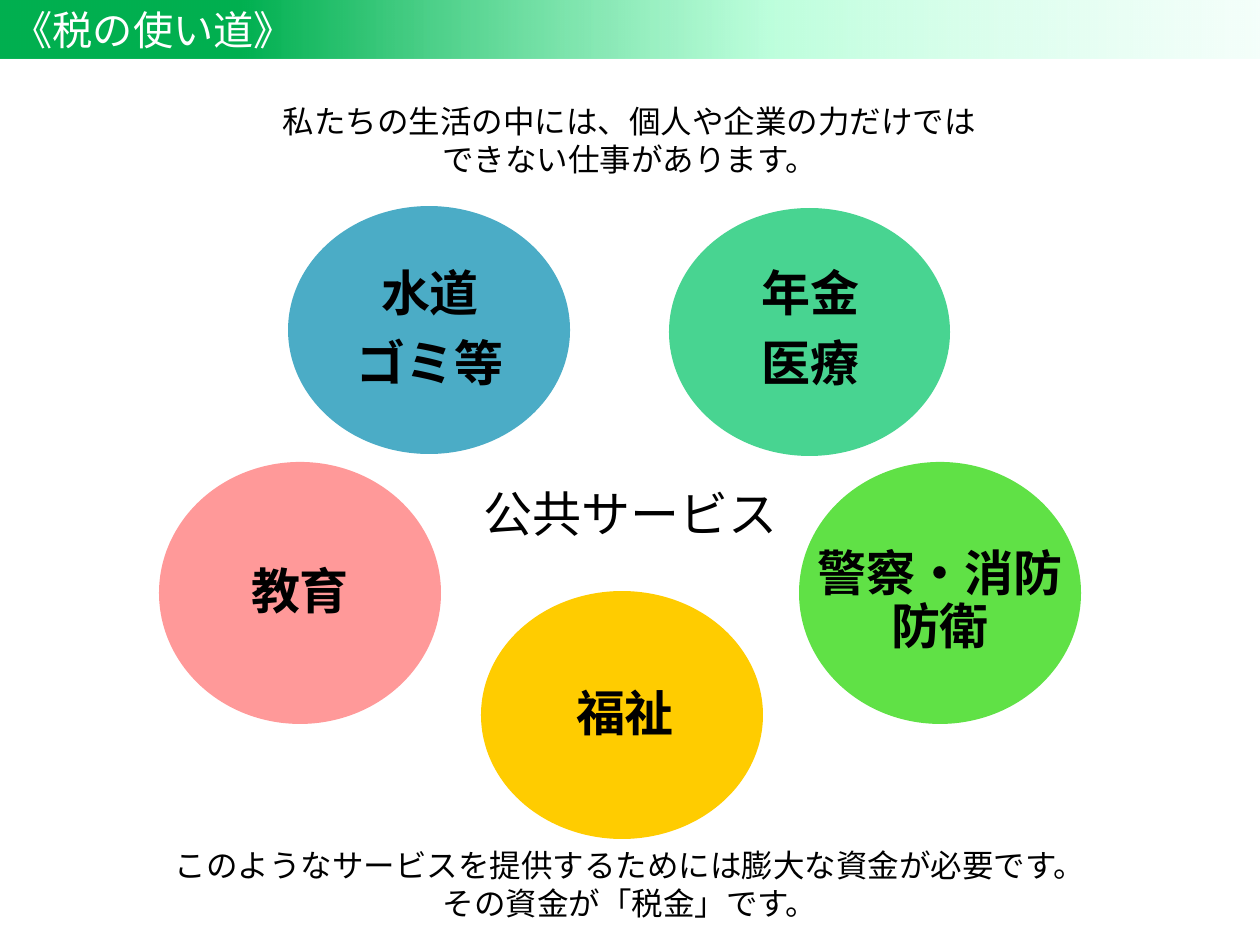
from lxml import etree
from pptx import Presentation
from pptx.dml.color import RGBColor
from pptx.enum.shapes import MSO_SHAPE
from pptx.enum.text import MSO_ANCHOR, MSO_AUTO_SIZE, PP_ALIGN
from pptx.oxml import parse_xml
from pptx.oxml.ns import nsdecls, qn
from pptx.util import Pt

PX = 914400 / 126
OVAL, RECTANGLE = MSO_SHAPE.OVAL, MSO_SHAPE.RECTANGLE
MIDDLE, TOP = MSO_ANCHOR.MIDDLE, MSO_ANCHOR.TOP
CENTER, LEFT = PP_ALIGN.CENTER, PP_ALIGN.LEFT
FIT_SHAPE, NO_FIT = MSO_AUTO_SIZE.SHAPE_TO_FIT_TEXT, MSO_AUTO_SIZE.NONE

BLACK = RGBColor(0x00, 0x00, 0x00)
WHITE = RGBColor(0xFF, 0xFF, 0xFF)
BLUE = RGBColor(0x4B, 0xAC, 0xC6)
PINK = RGBColor(0xFF, 0x99, 0x99)
YELLOW = RGBColor(0xFF, 0xCC, 0x00)
MINT = RGBColor(0x48, 0xD4, 0x91)
GREEN = RGBColor(0x60, 0xE1, 0x46)
BANNER_START = RGBColor(0x00, 0xB0, 0x50)
BANNER_MIDDLE = RGBColor(0xAB, 0xFF, 0xD3)
BANNER_END = RGBColor(0xDB, 0xFF, 0xF0)

BANNER_STOPS = [(19, BANNER_START, 100), (61, BANNER_MIDDLE, 78), (100, BANNER_END, 28)]
SPACED = {"line_spacing": 0.9, "space_after": Pt(9.8)}
SERVICES = [
    (BLUE, (288, 206, 282, 248), (330, 243, 200, 175), ["水道", "ゴミ等"]),
    (PINK, (159, 462, 282, 262), (200, 501, 200, 185), ["教育"]),
    (YELLOW, (481, 591, 282, 248), (525, 633, 200, 165), ["福祉"]),
    (MINT, (669, 208, 281, 248), (713, 243, 195, 175), ["年金", "医療"]),
    (GREEN, (799, 462, 282, 262), (799, 518, 282, 169), ["警察・消防防衛"]),
]
NOTES = [
    ((208, 96, 843, 89), ["私たちの生活の中には、個人や企業の力だけでは", "できない仕事があります。"]),
    ((160, 840, 940, 89), ["このようなサービスを提供するためには膨大な資金が必要です。", "その資金が「税金」です。"]),
]


def px(*lengths):
    """Turn pixel lengths into EMU."""
    return [round(length * PX) for length in lengths]


def set_format(target, values):
    """Set each named attribute on the target."""
    for name, value in values.items():
        setattr(target, name, value)


class SlideBuilder:
    """Holds the style and the current slide."""

    font_name = "Noto Sans CJK JP"

    def __init__(self, slide):
        self.slide = slide

    def fill_text(self, shape, lines, size, color=BLACK, bold=False, align=CENTER, spacing=None, frame=None):
        text_frame = shape.text_frame
        set_format(text_frame, {"word_wrap": True, **(frame or {})})
        for index, line in enumerate(lines):
            paragraph = text_frame.paragraphs[0] if index == 0 else text_frame.add_paragraph()
            set_format(paragraph, {"alignment": align, **(spacing or {})})
            run = paragraph.add_run()
            run.text = line
            set_format(run.font, {"name": self.font_name, "size": Pt(size), "bold": bold})
            run.font.color.rgb = color
            etree.SubElement(run._r.get_or_add_rPr(), qn("a:ea"), typeface=self.font_name)

    def shape(self, container, kind, box, color):
        shape = container.add_shape(kind, *px(*box))
        shape.shadow.inherit = False
        shape.fill.solid()
        shape.fill.fore_color.rgb = color
        shape.line.fill.background()
        return shape

    def text(self, container, box, lines, size, **style):
        self.fill_text(container.add_textbox(*px(*box)), lines, size, **style)

    def service(self, color, oval_box, label_box, lines):
        group = self.slide.shapes.add_group_shape()
        self.shape(group.shapes, OVAL, oval_box, color)
        sides = ("margin_left", "margin_top", "margin_right", "margin_bottom")
        frame = {"vertical_anchor": MIDDLE, "auto_size": NO_FIT, **dict.fromkeys(sides, Pt(1.4))}
        self.text(group.shapes, label_box, lines, 28, bold=True, spacing=SPACED, frame=frame)

    def banner(self, box, title):
        shape = self.shape(self.slide.shapes, RECTANGLE, box, BANNER_START)
        stops = "".join(
            f'<a:gs pos="{position * 1000}"><a:srgbClr val="{color}">'
            f'<a:alpha val="{opacity * 1000}"/></a:srgbClr></a:gs>'
            for position, color, opacity in BANNER_STOPS
        )
        gradient = parse_xml(
            f'<a:gradFill {nsdecls("a")} rotWithShape="1"><a:gsLst>{stops}</a:gsLst>'
            '<a:lin ang="0" scaled="0"/></a:gradFill>'
        )
        properties = shape._element.spPr
        properties.replace(properties.find(qn("a:solidFill")), gradient)
        self.fill_text(shape, [title], 23, color=WHITE, align=LEFT, frame={"vertical_anchor": MIDDLE})


def main():
    """Build the slide on the uses of tax."""
    presentation = Presentation()
    presentation.slide_width, presentation.slide_height = px(1260, 945)
    slide = presentation.slides.add_slide(presentation.slide_layouts[6])
    builder = SlideBuilder(slide)
    for service in SERVICES:
        builder.service(*service)
    frame = {"vertical_anchor": TOP, "auto_size": FIT_SHAPE}
    builder.text(slide.shapes, (469, 484, 323, 67), ["公共サービス"], 28,
                 spacing=SPACED, frame={**frame, "word_wrap": False})
    for box, lines in NOTES:
        builder.text(slide.shapes, box, lines, 18, frame=frame)
    builder.banner((0, 0, 1260, 59), "《税の使い道》")
    presentation.save("out.pptx")


if __name__ == "__main__":
    main()
